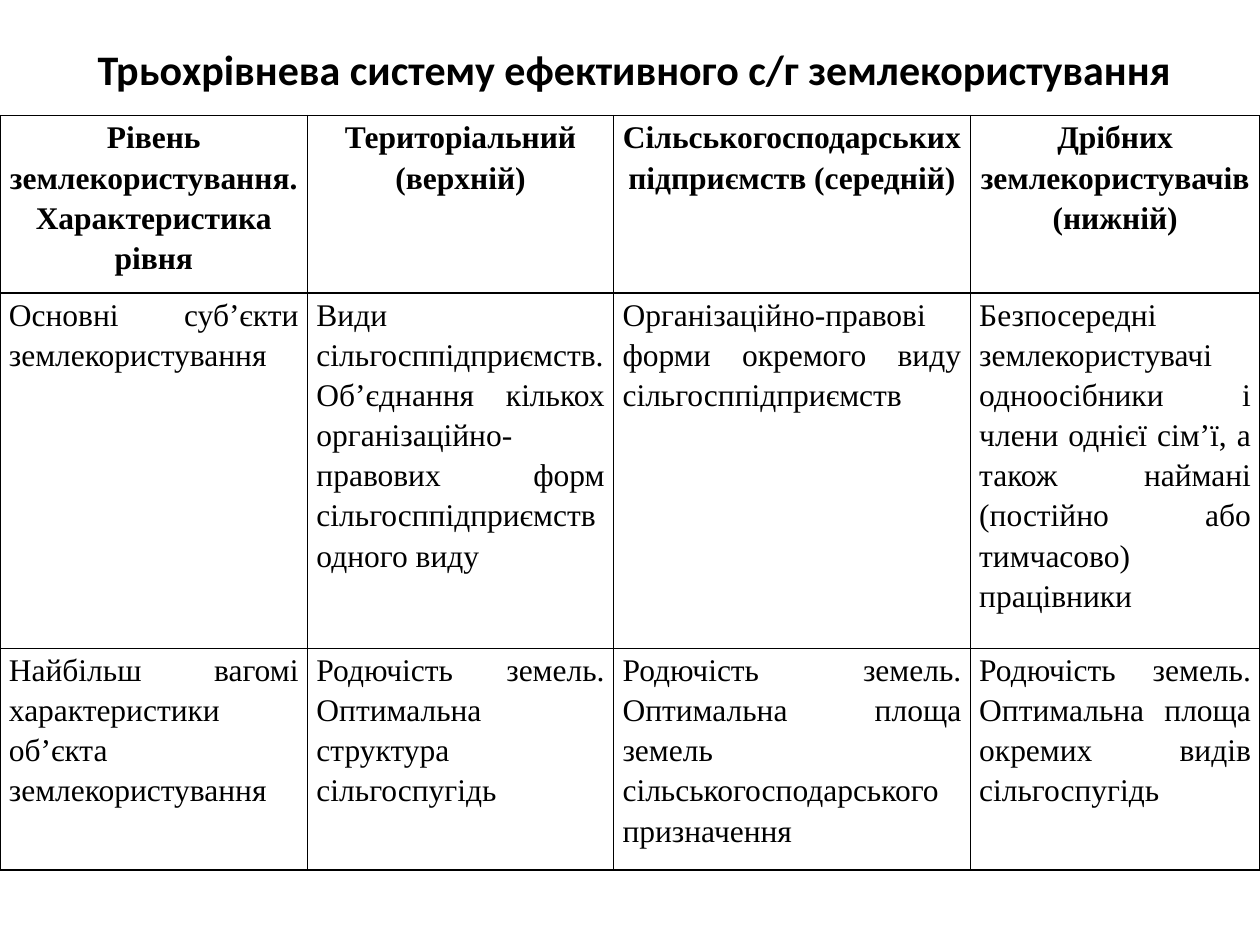
from dataclasses import dataclass

from lxml.etree import SubElement
from pptx import Presentation
from pptx.dml.color import RGBColor
from pptx.enum.text import MSO_ANCHOR, MSO_AUTO_SIZE, PP_ALIGN
from pptx.oxml.ns import qn
from pptx.util import Cm, Pt


@dataclass(frozen=True)
class Theme:
    ink: RGBColor = RGBColor(0, 0, 0)
    paper: RGBColor = RGBColor(255, 255, 255)
    title_font: str = "Calibri"
    table_font: str = "Times New Roman"
    title_size: int = 24
    table_size: int = 18
    line_spacing: float = 1.15
    border_width: int = 1


@dataclass(frozen=True)
class TableRow:
    height: float
    texts: tuple[str, ...]
    header: bool = False


THEME = Theme()
COLUMN_WIDTHS = (6.2, 6.17, 7.19, 5.84)
ROWS = (
    TableRow(3.58, (
        "Рівень землекористування. Характеристика рівня",
        "Територіальний (верхній)",
        "Сільськогосподарських підприємств (середній)",
        "Дрібних землекористувачів (нижній)",
    ), header=True),
    TableRow(7.16, (
        "Основні суб’єкти землекористування",
        "Види сільгосппідприємств. Об’єднання кількох організаційно-правових "
        "форм сільгосппідприємств одного виду",
        "Організаційно-правові форми окремого виду сільгосппідприємств",
        "Безпосередні землекористувачі одноосібники і члени однієї сім’ї, "
        "а також наймані (постійно або тимчасово) працівники",
    )),
    TableRow(4.47, (
        "Найбільш вагомі характеристики об’єкта землекористування",
        "Родючість земель. Оптимальна структура сільгоспугідь",
        "Родючість земель. Оптимальна площа земель "
        "сільськогосподарського призначення",
        "Родючість земель. Оптимальна площа окремих видів сільгоспугідь",
    )),
)


def style_paragraph(para, font_name: str, size: int, bold: bool, align) -> None:
    """Align a paragraph and format its runs."""
    para.alignment = align
    for span in para.runs:
        span.font.name = font_name
        span.font.size = Pt(size)
        span.font.bold = bold
        span.font.color.rgb = THEME.ink


def draw_borders(cell) -> None:
    """Give all four sides of a cell a solid line."""
    properties = cell._tc.get_or_add_tcPr()
    for side in ("lnL", "lnR", "lnT", "lnB"):
        line = SubElement(properties, qn(f"a:{side}"), w=str(Pt(THEME.border_width)))
        fill = SubElement(line, qn("a:solidFill"))
        SubElement(fill, qn("a:srgbClr"), val=str(THEME.ink))


def fill_cell(cell, text: str, header: bool) -> None:
    """Write and format one table cell."""
    cell.margin_left = cell.margin_right = Cm(0.18)
    cell.margin_top = cell.margin_bottom = Cm(0)
    draw_borders(cell)
    cell.fill.solid()
    cell.fill.fore_color.rgb = THEME.paper
    cell.text_frame.text = text
    para = cell.text_frame.paragraphs[0]
    para.line_spacing = THEME.line_spacing
    align = PP_ALIGN.CENTER if header else PP_ALIGN.JUSTIFY
    style_paragraph(para, THEME.table_font, THEME.table_size, header, align)


def add_levels_table(page) -> None:
    """Draw the table of land use levels."""
    frame = page.shapes.add_table(
        len(ROWS), len(COLUMN_WIDTHS), Cm(0), Cm(2.33),
        Cm(sum(COLUMN_WIDTHS)), Cm(sum(row.height for row in ROWS)))
    table = frame.table
    for column, width in zip(table.columns, COLUMN_WIDTHS):
        column.width = Cm(width)
    for table_row, row in zip(table.rows, ROWS):
        table_row.height = Cm(row.height)
        for cell, text in zip(table_row.cells, row.texts):
            fill_cell(cell, text, row.header)


def set_title(page, text: str) -> None:
    """Place and format the title placeholder."""
    box = page.shapes.title
    box.left, box.top, box.width, box.height = Cm(0.89), Cm(0.74), Cm(23.8), Cm(1.27)
    frame = box.text_frame
    frame.text = text
    frame.auto_size = MSO_AUTO_SIZE.NONE
    frame.vertical_anchor = MSO_ANCHOR.MIDDLE
    style_paragraph(frame.paragraphs[0], THEME.title_font, THEME.title_size,
                    True, PP_ALIGN.CENTER)


def main() -> None:
    """Build and save the slide."""
    deck = Presentation()
    deck.slide_width, deck.slide_height = Cm(25.4), Cm(19.05)
    page = deck.slides.add_slide(deck.slide_layouts[5])
    set_title(page, "Трьохрівнева систему ефективного с/г землекористування")
    add_levels_table(page)
    deck.save("out.pptx")


if __name__ == "__main__":
    main()
